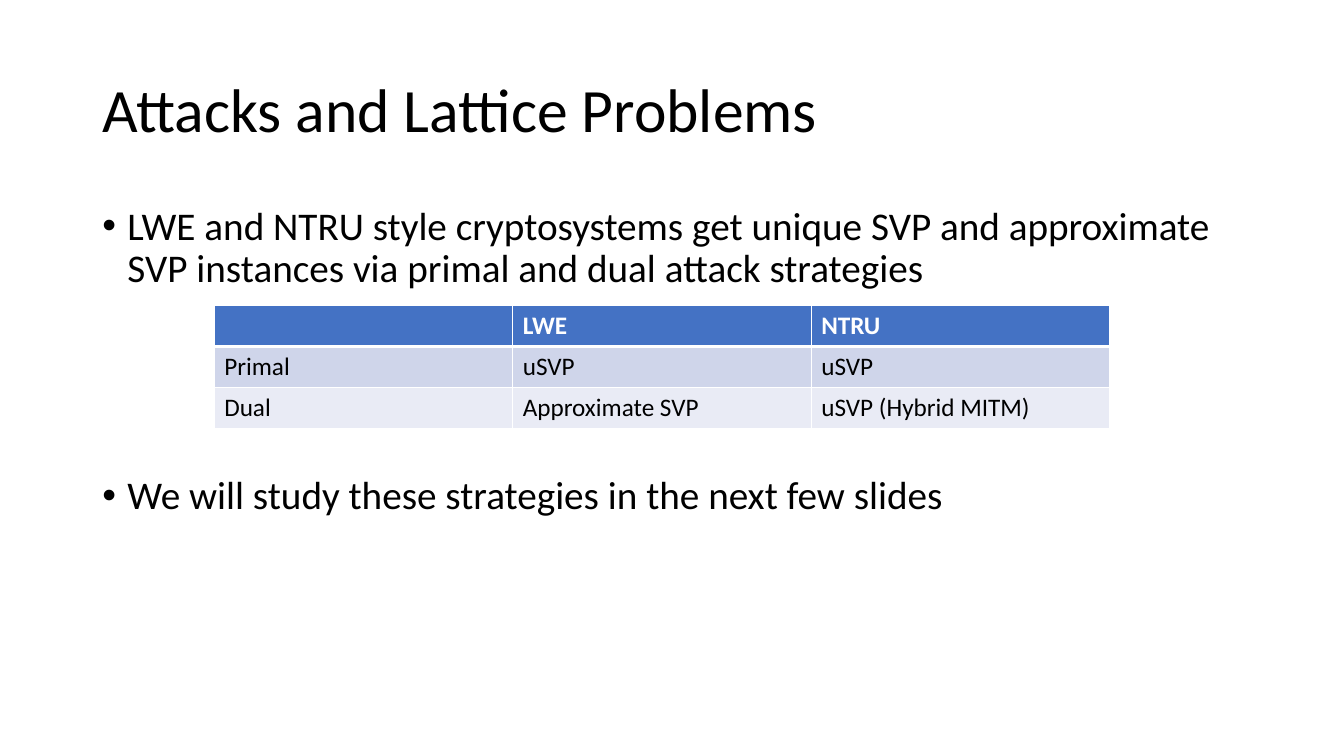
import pptx
import pptx.util
import pptx.dml.color
import pptx.enum.text
import pptx.oxml.ns
import lxml.etree

PX = 9525
FONT = "Calibri"
BLACK = pptx.dml.color.RGBColor(0x00, 0x00, 0x00)
WHITE = pptx.dml.color.RGBColor(0xFF, 0xFF, 0xFF)
BLUE = pptx.dml.color.RGBColor(0x44, 0x72, 0xC4)
PALE = pptx.dml.color.RGBColor(0xCF, 0xD5, 0xEA)
LIGHT = pptx.dml.color.RGBColor(0xE9, 0xEB, 0xF5)

TITLE = "Attacks and Lattice Problems"
POINTS = [
    ("LWE and NTRU style cryptosystems get unique SVP and approximate "
     "SVP instances via primal and dual attack strategies", 10),
    ("We will study these strategies in the next few slides", 132),
]
ROWS = [
    ("", "LWE", "NTRU"),
    ("Primal", "uSVP", "uSVP"),
    ("Dual", "Approximate SVP", "uSVP (Hybrid MITM)"),
]
FILLS = [BLUE, PALE, LIGHT]


def scale(box):
    """Turn a box in px into EMU."""
    return [n * PX for n in box]


def style(para, size, color, bold=False):
    """Format every run of a paragraph."""
    for run in para.runs:
        font = run.font
        font.name, font.size, font.bold = FONT, pptx.util.Pt(size), bold
        font.color.rgb = color


def add_node(parent, tag, **attrs):
    """Append a DrawingML element."""
    return lxml.etree.SubElement(parent, pptx.oxml.ns.qn(tag), attrs)


def add_title(slide, box):
    """Place the title in its placeholder."""
    title = slide.shapes.title
    title.left, title.top, title.width, title.height = scale(box)
    frame = title.text_frame
    frame.text = TITLE
    frame.word_wrap = True
    frame.auto_size = pptx.enum.text.MSO_AUTO_SIZE.NONE
    frame.vertical_anchor = pptx.enum.text.MSO_ANCHOR.MIDDLE
    para = frame.paragraphs[0]
    para.alignment = pptx.enum.text.PP_ALIGN.LEFT
    para.line_spacing = 0.9
    style(para, 44, BLACK)


def add_points(slide, box):
    """Place the bullets, leaving room for the table between them."""
    frame = slide.shapes.add_textbox(*scale(box)).text_frame
    frame.word_wrap = True
    frame.text = "\n".join(text for text, gap in POINTS)
    for para, (text, gap) in zip(frame.paragraphs, POINTS):
        para.line_spacing = 0.9
        para.space_before = pptx.util.Pt(gap)
        style(para, 28, BLACK)
        props = para._p.get_or_add_pPr()
        props.set("marL", str(24 * PX))
        props.set("indent", str(-24 * PX))
        add_node(props, "a:buFont", typeface="Arial")
        add_node(props, "a:buChar", char="•")


def add_edges(cell, row):
    """Draw white cell borders, thick below the header."""
    props = cell._tc.get_or_add_tcPr()
    thick = {(0, "B"), (1, "T")}
    for side in "LRTB":
        width = pptx.util.Pt(3 if (row, side) in thick else 1)
        line = add_node(props, "a:ln" + side, w=str(width))
        fill = add_node(line, "a:solidFill")
        add_node(fill, "a:srgbClr", val=str(WHITE))


def add_grid(slide, box):
    """Place the table of attacks and problems."""
    count = len(ROWS)
    grid = slide.shapes.add_table(count, len(ROWS[0]), *scale(box)).table
    grid.horz_banding = False
    for r, texts in enumerate(ROWS):
        for c, text in enumerate(texts):
            cell = grid.cell(r, c)
            cell.text = text
            add_edges(cell, r)
            cell.fill.solid()
            cell.fill.fore_color.rgb = FILLS[r]
            head = r == 0
            style(cell.text_frame.paragraphs[0], 18,
                  WHITE if head else BLACK, head)


def main():
    """Build and save the slide."""
    deck = pptx.Presentation()
    deck.slide_width, deck.slide_height = scale((1280, 720))
    slide = deck.slides.add_slide(deck.slide_layouts[5])
    add_title(slide, (88, 38, 1104, 139))
    add_points(slide, (88, 192, 1104, 457))
    add_grid(slide, (204, 291, 853, 117))
    deck.save("out.pptx")


if __name__ == "__main__":
    main()
